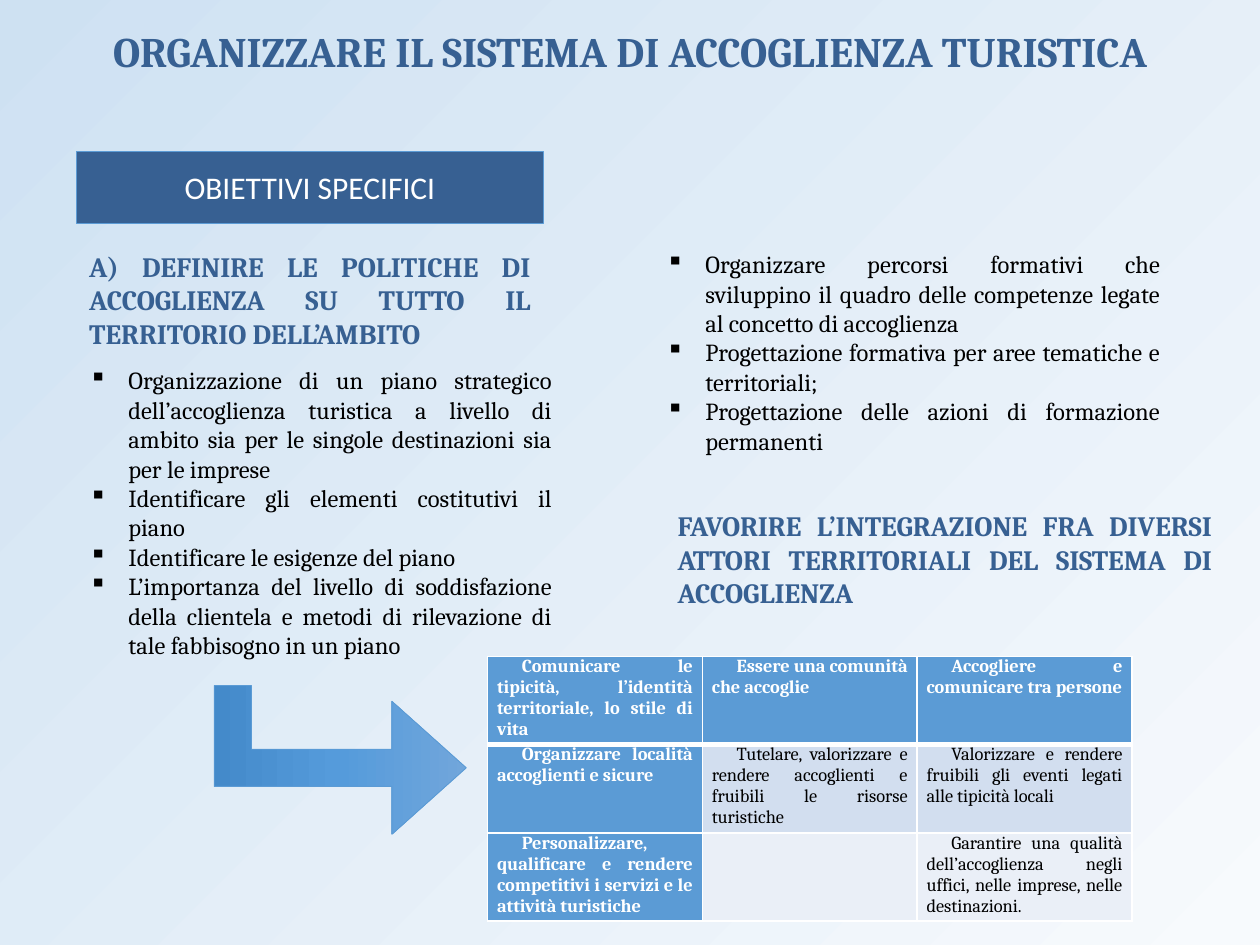
from lxml import etree
from pptx import Presentation
from pptx.dml.color import RGBColor
from pptx.enum.shapes import MSO_SHAPE
from pptx.enum.text import MSO_ANCHOR, MSO_AUTO_SIZE, PP_ALIGN
from pptx.oxml.ns import qn
from pptx.util import Cm, Pt

RECT, ARROW = MSO_SHAPE.RECTANGLE, MSO_SHAPE.BENT_UP_ARROW
CENTER, JUSTIFY = PP_ALIGN.CENTER, PP_ALIGN.JUSTIFY
MIDDLE, GROW = MSO_ANCHOR.MIDDLE, MSO_AUTO_SIZE.SHAPE_TO_FIT_TEXT


class Theme:
    navy, blue, white, black = "376092", "5B9BD5", "FFFFFF", "000000"
    bands = ["D2DEEF", "EAEFF7"]
    backdrop = [(0, "F7FAFD"), (100, "CEE1F2")]
    arrow = [(0, "71A6DB"), (50, "559BDB"), (100, "448ACA")]
    serif, sans = "Cambria", "Calibri"
    title, banner, heading, body, cell = 24, 18, 16, 14, 10.5


def write(tf, lines, size, color, bold=False, align=JUSTIFY, font=Theme.serif, indent=None, bullet=None):
    tf.text = "\n".join(lines)
    for p in tf.paragraphs:
        p.alignment = align
        pPr = p._p.get_or_add_pPr()
        if indent:
            pPr.set("indent", str(Cm(indent)))
        if bullet:
            pPr.set("marL", str(Cm(-indent)))
            etree.SubElement(pPr, qn("a:buChar"), char=bullet)
        for r in p.runs:
            r.font.name, r.font.size, r.font.bold = font, Pt(size), bold
            r.font.color.rgb = RGBColor.from_string(color)


def shade(fill, element, stops, angle):
    fill.gradient()
    fill.gradient_angle = angle
    gs_list = element.find(".//" + qn("a:gsLst"))
    for gs in list(gs_list):
        gs_list.remove(gs)
    for pos, color in stops:
        gs = etree.SubElement(gs_list, qn("a:gs"), pos=str(pos * 1000))
        etree.SubElement(gs, qn("a:srgbClr"), val=color)


prs = Presentation()
prs.slide_width, prs.slide_height = Cm(25.4), Cm(19.05)
slide = prs.slides.add_slide(prs.slide_layouts[6])
shade(slide.background.fill, slide._element, Theme.backdrop, 135)

banner = slide.shapes.add_shape(RECT, Cm(1.55), Cm(3.05), Cm(9.4), Cm(1.45))
banner.fill.solid()
banner.fill.fore_color.rgb = RGBColor.from_string(Theme.navy)
banner.text_frame.vertical_anchor = MIDDLE
write(banner.text_frame, ["OBIETTIVI SPECIFICI"], Theme.banner, Theme.white, align=CENTER, font=Theme.sans)

headings = [
    (0, 0.38, 25.4, 1.27, Theme.title, CENTER, "ORGANIZZARE IL SISTEMA DI ACCOGLIENZA TURISTICA"),
    (1.55, 4.9, 9.4, 2.31, Theme.heading, JUSTIFY,
     "A) DEFINIRE LE POLITICHE DI ACCOGLIENZA SU TUTTO IL TERRITORIO DELL’AMBITO"),
    (13.41, 10.13, 11.28, 2.31, Theme.heading, JUSTIFY,
     "FAVORIRE L’INTEGRAZIONE FRA DIVERSI ATTORI TERRITORIALI DEL SISTEMA DI ACCOGLIENZA"),
]
for x, y, w, h, size, align, text in headings:
    tf = slide.shapes.add_textbox(Cm(x), Cm(y), Cm(w), Cm(h)).text_frame
    tf.word_wrap, tf.auto_size = True, GROW
    write(tf, [text], size, Theme.navy, bold=True, align=align)

lists = [
    (1.55, 7.24, 9.83, 6.25, [
        "Organizzazione di un piano strategico dell’accoglienza turistica a livello di ambito "
        "sia per le singole destinazioni sia per le imprese",
        "Identificare gli elementi costitutivi il piano",
        "Identificare le esigenze del piano",
        "L’importanza del livello di soddisfazione della clientela e metodi di rilevazione "
        "di tale fabbisogno in un piano",
    ]),
    (13.18, 4.9, 10.46, 4.45, [
        "Organizzare percorsi formativi che sviluppino il quadro delle competenze legate "
        "al concetto di accoglienza",
        "Progettazione formativa per aree tematiche e territoriali;",
        "Progettazione delle azioni di formazione permanenti",
    ]),
]
for x, y, w, h, lines in lists:
    tf = slide.shapes.add_textbox(Cm(x), Cm(y), Cm(w), Cm(h)).text_frame
    tf.word_wrap, tf.auto_size = True, GROW
    write(tf, lines, Theme.body, Theme.black, indent=-0.79, bullet="▪")

rows = [
    ["Comunicare le tipicità, l’identità territoriale, lo stile di vita",
     "Essere una comunità che accoglie",
     "Accogliere e comunicare tra persone"],
    ["Organizzare località accoglienti e sicure",
     "Tutelare, valorizzare e rendere accoglienti e fruibili le risorse turistiche",
     "Valorizzare e rendere fruibili gli eventi legati alle tipicità locali"],
    ["Personalizzare, qualificare e rendere competitivi i servizi e le attività turistiche",
     "",
     "Garantire una qualità dell’accoglienza negli uffici, nelle imprese, nelle destinazioni."],
]
table = slide.shapes.add_table(3, 3, Cm(9.83), Cm(13.23), Cm(12.99), Cm(5.34)).table
for i, row in enumerate(rows):
    for j, text in enumerate(row):
        cell = table.cell(i, j)
        cell.margin_left = cell.margin_right = Cm(0.19)
        cell.margin_top = cell.margin_bottom = 0
        header = i == 0 or j == 0
        write(cell.text_frame, [text], Theme.cell, Theme.white if header else Theme.black, bold=header, indent=0.5)
        tcPr = cell._tc.get_or_add_tcPr()
        for side in "LRTB":
            thick = (i, side) in [(0, "B"), (1, "T")]
            ln = etree.SubElement(tcPr, qn("a:ln" + side), w=str(Pt(3 if thick else 1)))
            etree.SubElement(etree.SubElement(ln, qn("a:solidFill")), qn("a:srgbClr"), val=Theme.white)
        cell.fill.solid()
        cell.fill.fore_color.rgb = RGBColor.from_string(Theme.blue if header else Theme.bands[i - 1])

arrow = slide.shapes.add_shape(ARROW, Cm(5.36), Cm(12.78), Cm(3), Cm(5.08))
arrow.rotation = 90
for k, value in enumerate([0.25, 0.447, 0.5]):
    arrow.adjustments[k] = value
shade(arrow.fill, arrow._element, Theme.arrow, 270)

for s in (banner, arrow):
    s.shadow.inherit = False
    s.line.color.rgb = RGBColor.from_string(Theme.blue)
    s.line.width = Pt(0.5)

prs.save("out.pptx")
